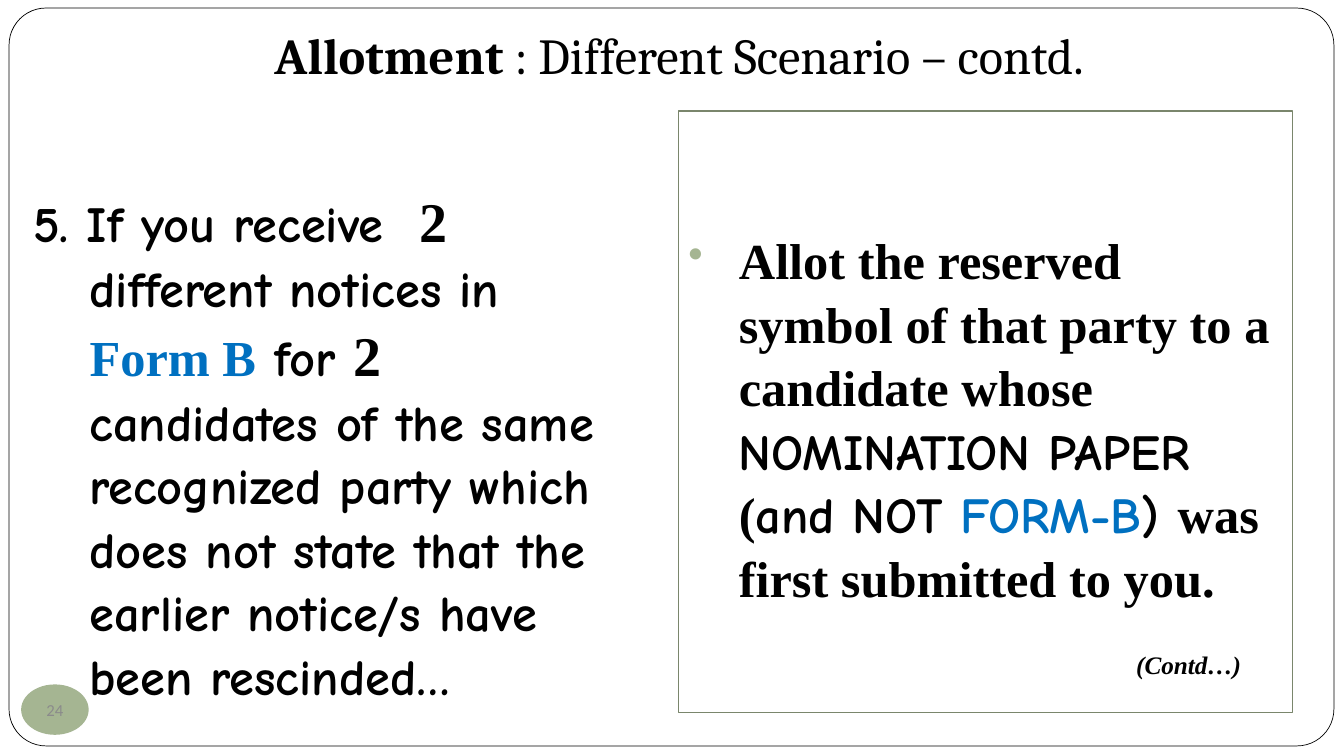
from lxml.etree import SubElement
from pptx import Presentation
from pptx.dml.color import RGBColor
from pptx.enum.shapes import MSO_SHAPE
from pptx.enum.text import MSO_ANCHOR, PP_ALIGN
from pptx.oxml.ns import qn
from pptx.util import Inches, Pt

COLORS = {"black": "000000", "white": "FFFFFF", "blue": "0070C0",
          "sage": "A5B592", "olive": "7A866C", "gray": "8B8B8B"}
HEADING, HAND, SERIF = "Cambria", "Comic Neue", "Times New Roman"

# Content: each run is its text and what differs from the paragraph's format
TITLE = [("Allotment", {}),
         (" : Different Scenario – contd.", {"bold": False})]
SCENARIO = [
    ("5. If you receive  ", {}),
    ("2", {"font": SERIF, "size": 40}),
    (" different notices in ", {}),
    ("Form B", {"font": SERIF, "color": "blue"}),
    (" for ", {}),
    ("2", {"font": SERIF, "size": 40}),
    (" candidates of the same recognized party which does not state that "
     "the earlier notice/s have been rescinded…", {}),
]
DECISION = [
    ("Allot the reserved symbol of that party to a candidate whose ", {}),
    ("NOMINATION PAPER ", {"font": HAND}),
    ("(", {}),
    ("and NOT ", {"font": HAND}),
    ("FORM-B", {"font": HAND, "color": "blue"}),
    (") ", {"font": HAND}),
    ("was first submitted to you.", {}),
]
CONTINUED = [("(Contd…)", {})]
PAGE_NUMBER = [("24", {})]

deck = Presentation()
deck.slide_width, deck.slide_height = Inches(13.33), Inches(7.5)
page = deck.slides.add_slide(deck.slide_layouts[6])


def add_box(place, kind=None, fill=None, line=None, width=1):
    """Add a text box, or a preset shape when a kind is given."""
    place = [Inches(length) for length in place]
    if kind is None:
        return page.shapes.add_textbox(*place)
    box = page.shapes.add_shape(kind, *place)
    box.shadow.inherit = False
    if fill:
        box.fill.solid()
        box.fill.fore_color.rgb = RGBColor.from_string(COLORS[fill])
    else:
        box.fill.background()
    if line:
        box.line.color.rgb = RGBColor.from_string(COLORS[line])
        box.line.width = Pt(width)
    else:
        box.line.fill.background()
    return box


def write(box, runs, font=None, size=36, color="black", bold=True, italic=False,
          align=PP_ALIGN.LEFT, anchor=MSO_ANCHOR.TOP, wrap=True,
          left=0.1, top=0.05, hang=0, spacing=1.0, bullet=None):
    frame = box.text_frame
    frame.word_wrap = wrap
    frame.vertical_anchor = anchor
    frame.margin_left, frame.margin_top = Inches(left), Inches(top)
    para = frame.paragraphs[0]
    para.alignment, para.line_spacing = align, spacing
    properties = para._p.get_or_add_pPr()
    if hang:
        properties.set("marL", str(Inches(hang)))
        properties.set("indent", str(-Inches(hang)))
    if bullet:
        tint = SubElement(properties, qn("a:buClr"))
        SubElement(tint, qn("a:srgbClr"), val=COLORS["sage"])
        SubElement(properties, qn("a:buSzPct"), val="85000")
        SubElement(properties, qn("a:buChar"), char=bullet)
    base = {"font": font, "size": size, "color": color, "bold": bold}
    for text, changes in runs:
        look = {**base, **changes}
        span = para.add_run()
        span.text = text
        span.font.name, span.font.size = look["font"], Pt(look["size"])
        span.font.bold, span.font.italic = look["bold"], italic
        span.font.color.rgb = RGBColor.from_string(COLORS[look["color"]])


# Page frame
frame_box = add_box((0.09, 0.08, 13.14, 7.32), MSO_SHAPE.ROUNDED_RECTANGLE,
                    "white", "black", 0.5)
frame_box.adjustments[0] = 0.05

# Title
write(add_box((0.33, 0.17, 12.59, 0.73)), TITLE, font=HEADING,
      align=PP_ALIGN.CENTER, anchor=MSO_ANCHOR.MIDDLE, left=0.32)

# Decision on the right
write(add_box((6.73, 1.1, 6.09, 5.97), MSO_SHAPE.RECTANGLE, line="olive"),
      DECISION, font=SERIF, anchor=MSO_ANCHOR.MIDDLE, top=0.15,
      hang=0.5, spacing=1.05, bullet="•")

# Scenario on the left
write(add_box((0.23, 1.15, 6.02, 6.02)), SCENARIO, font=HAND,
      top=0.67, hang=0.56, spacing=1.05)

# Page number
write(add_box((0.21, 6.79, 0.67, 0.5), MSO_SHAPE.OVAL, "sage"), PAGE_NUMBER,
      size=12, color="gray", bold=False, align=PP_ALIGN.CENTER,
      anchor=MSO_ANCHOR.MIDDLE)

# Continuation mark
write(add_box((11.17, 6.39, 1.25, 0.4)), CONTINUED, font=SERIF, size=18,
      italic=True, wrap=False)

deck.save("out.pptx")
